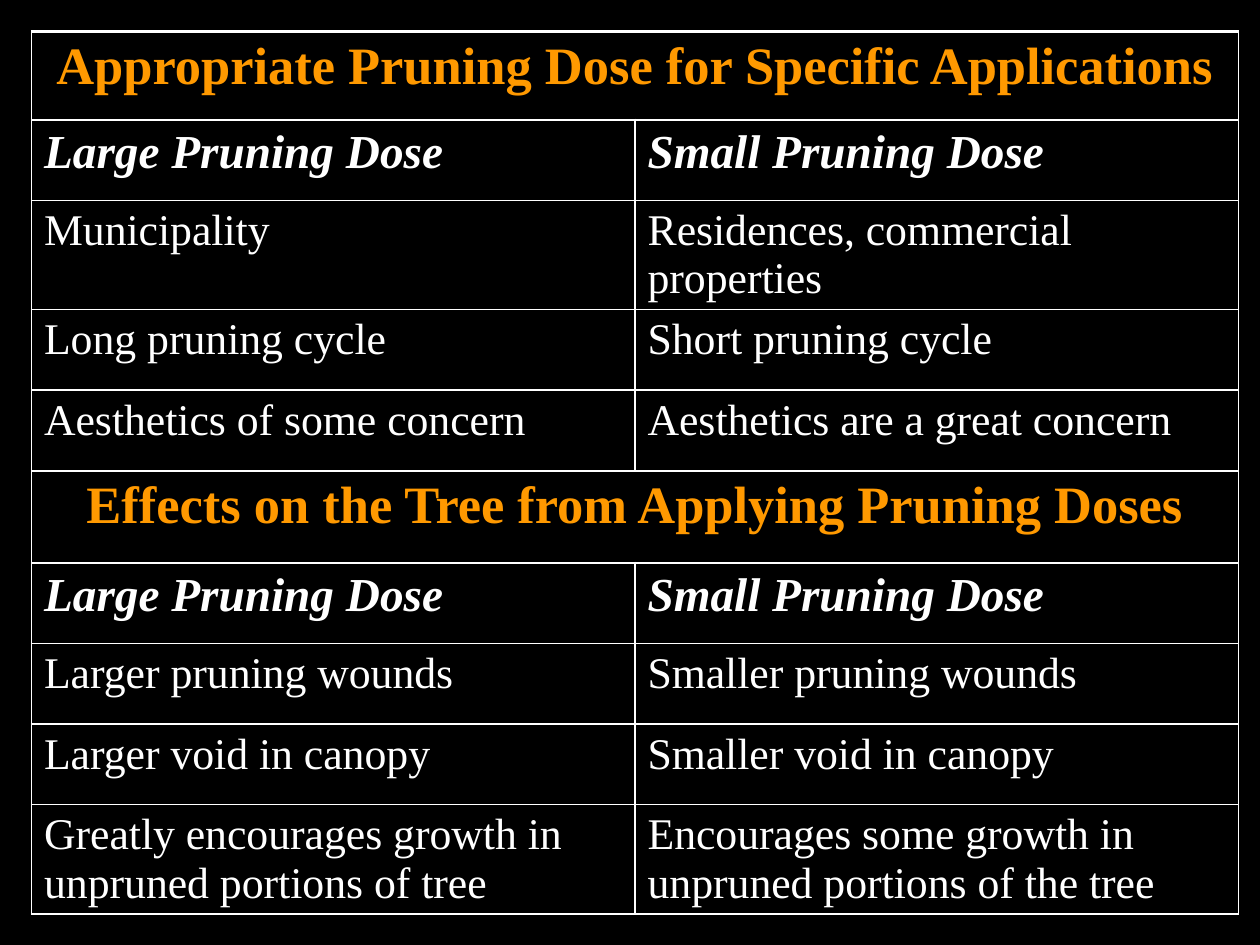
"""Build a slide with a table comparing large and small pruning doses."""
from lxml.etree import fromstring
from pptx import Presentation
from pptx.dml.color import RGBColor as RGB
from pptx.enum.text import PP_ALIGN as Align
from pptx.oxml.ns import nsdecls
from pptx.util import Inches, Pt

HUES = {"back": "000000", "text": "FFFFFF", "head": "FF9900"}
FONT = "Times New Roman"
STYLES = {
    "head": (30, True, False, "head"),
    "sub": (27, True, True, "text"),
    "body": (25, False, False, "text"),
}
HIGH = {"head": 0.7, "sub": 0.64, "body": 0.64}
DOSES = ("sub", "Large Pruning Dose", "Small Pruning Dose")
ROWS = [
    ("head", "Appropriate Pruning Dose for Specific Applications"),
    DOSES,
    ("body", "Municipality", "Residences, commercial properties"),
    ("body", "Long pruning cycle", "Short pruning cycle"),
    ("body", "Aesthetics of some concern", "Aesthetics are a great concern"),
    ("head", "Effects on the Tree from Applying Pruning Doses"),
    DOSES,
    ("body", "Larger pruning wounds", "Smaller pruning wounds"),
    ("body", "Larger void in canopy", "Smaller void in canopy"),
    ("body", "Greatly encourages growth in unpruned portions of tree",
     "Encourages some growth in unpruned portions of the tree"),
]
THICK = {0, 1, 5, 6}


def edge(cell, spot, side, width):
    line = fromstring(
        f'<a:ln{side} {nsdecls("a")} w="{Pt(width)}"><a:solidFill>'
        f'<a:srgbClr val="{HUES["text"]}"/></a:solidFill></a:ln{side}>')
    cell._tc.get_or_add_tcPr().insert(spot, line)


deck = Presentation()
deck.slide_width, deck.slide_height = Inches(10), Inches(7.5)
slide = deck.slides.add_slide(deck.slide_layouts[6])
slide.background.fill.solid()
slide.background.fill.fore_color.rgb = RGB.from_string(HUES["back"])

tall = sum(HIGH[row[0]] for row in ROWS)
grid = slide.shapes.add_table(
    len(ROWS), 2, Inches(0.25), Inches(0.25), Inches(9.58), Inches(tall)).table
grid.first_row = grid.horz_banding = False
for col in grid.columns:
    col.width = Inches(4.79)

for r, (kind, *words) in enumerate(ROWS):
    size, bold, slant, hue = STYLES[kind]
    grid.rows[r].height = Inches(0.73 if r == 5 else HIGH[kind])
    if kind == "head":
        grid.cell(r, 0).merge(grid.cell(r, 1))
    for c in range(2):
        cell = grid.cell(r, c)
        cell.fill.solid()
        cell.fill.fore_color.rgb = RGB.from_string(HUES["back"])
        top, base = (1.5 if n in THICK else 1 for n in (r, r + 1))
        for spot, (side, width) in enumerate(zip("LRTB", (1, 1, top, base))):
            edge(cell, spot, side, width)
    for c, word in enumerate(words):
        para = grid.cell(r, c).text_frame.paragraphs[0]
        para.alignment = Align.CENTER if kind == "head" else Align.LEFT
        run = para.add_run()
        run.text = word
        font = run.font
        font.name, font.size = FONT, Pt(size)
        font.bold, font.italic = bold, slant
        font.color.rgb = RGB.from_string(HUES[hue])

deck.save("out.pptx")
